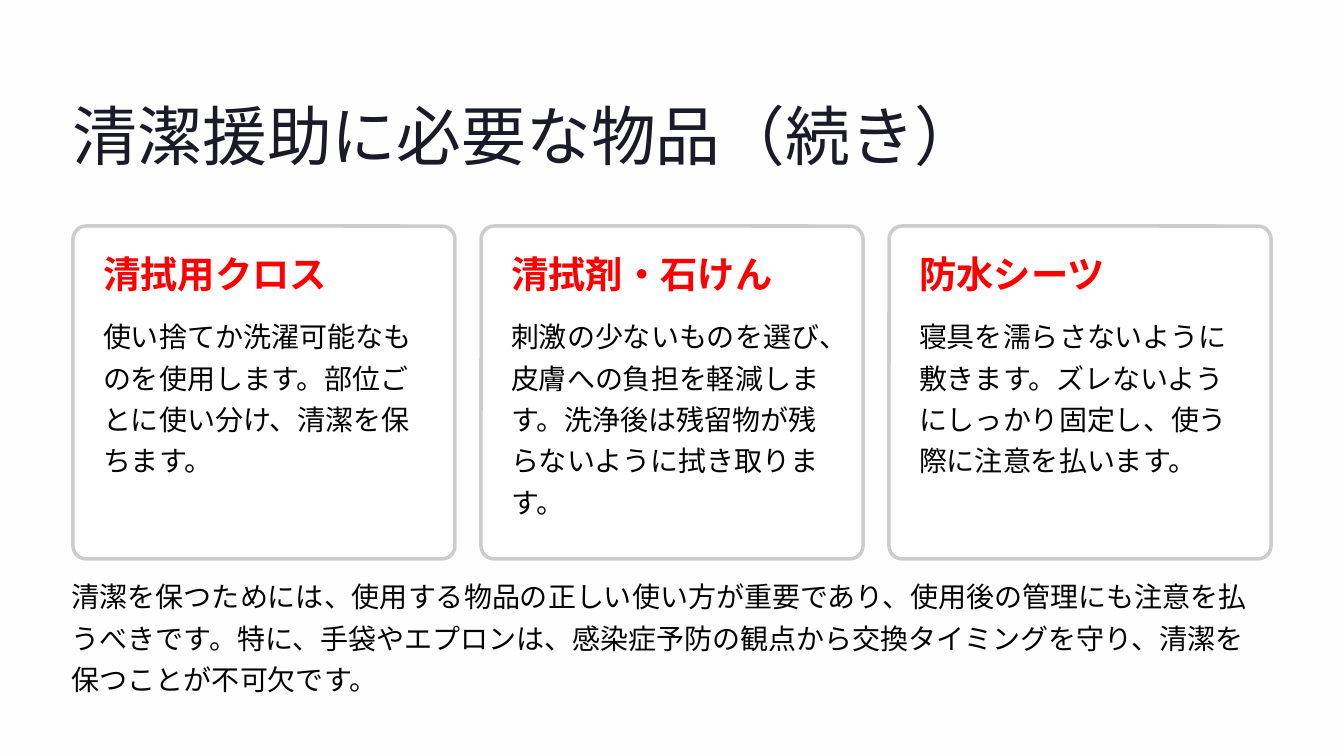
import pptx
import pptx.dml.color
import pptx.enum.lang
import pptx.enum.shapes
import pptx.oxml
import pptx.oxml.ns
import pptx.util

EMU_PER_PX = 914400 / 84
CARD_LEFT, CARD_TOP, CARD_WIDTH, CARD_HEIGHT = 73, 226, 382, 333
CARD_PITCH = 408
CARD_PADDING = 30
CARDS = [
    ("清拭用クロス",
     "使い捨てか洗濯可能なものを使用します。部位ごとに使い分け、清潔を保ちます。"),
    ("清拭剤・石けん",
     "刺激の少ないものを選び、皮膚への負担を軽減します。洗浄後は残留物が残らないように拭き取ります。"),
    ("防水シーツ",
     "寝具を濡らさないように敷きます。ズレないようにしっかり固定し、使う際に注意を払います。"),
]
SUMMARY = (
    "清潔を保つためには、使用する物品の正しい使い方が重要であり、使用後の管理にも注意を払うべきです。"
    "特に、手袋やエプロンは、感染症予防の観点から交換タイミングを守り、清潔を保つことが不可欠です。"
)
TITLE_STYLE = ("Inter", 55.5, 69.5, "1B1B27", False)
HEADING_STYLE = ("Inter", 32, 34.5, "FF0000", True)
BODY_STYLE = ("Cabin", 24, 35.5, "030303", False)


def px(*lengths):
    """Turn pixel lengths into a list of EMU."""
    return [pptx.util.Emu(round(length * EMU_PER_PX)) for length in lengths]


def add_text(box, text, style, wrap):
    """Add a text box without margins; box is left, top, width, height in px."""
    font_name, size, line_spacing, color, bold = style
    text_frame = slide.shapes.add_textbox(*px(*box)).text_frame
    text_frame.margin_left = text_frame.margin_right = 0
    text_frame.margin_top = text_frame.margin_bottom = 0
    text_frame.word_wrap = wrap
    text_frame.text = text
    paragraph = text_frame.paragraphs[0]
    paragraph.line_spacing = pptx.util.Pt(line_spacing)
    font = paragraph.runs[0].font
    font.name = font_name
    font.size = pptx.util.Pt(size)
    font.bold = bold
    font.color.rgb = pptx.dml.color.RGBColor.from_string(color)
    font.language_id = pptx.enum.lang.MSO_LANGUAGE_ID.JAPANESE
    latin = paragraph.runs[0]._r.rPr.find(pptx.oxml.ns.qn("a:latin"))
    east_asian = pptx.oxml.parse_xml(
        f'<a:ea {pptx.oxml.ns.nsdecls("a")} typeface="{font_name}"/>')
    latin.addnext(east_asian)


presentation = pptx.Presentation()
presentation.slide_width, presentation.slide_height = px(1344, 756)
slide = presentation.slides.add_slide(presentation.slide_layouts[6])
slide.background.fill.solid()
slide.background.fill.fore_color.rgb = pptx.dml.color.RGBColor.from_string("FEFEFE")

add_text((73, 92, 913, 81), "清潔援助に必要な物品（続き）", TITLE_STYLE, False)

for index, (heading, body) in enumerate(CARDS):
    left = CARD_LEFT + index * CARD_PITCH
    card = slide.shapes.add_shape(
        pptx.enum.shapes.MSO_SHAPE.ROUNDED_RECTANGLE,
        *px(left, CARD_TOP, CARD_WIDTH, CARD_HEIGHT))
    card.adjustments[0] = 0.04
    card.shadow.inherit = False
    card.fill.solid()
    card.fill.fore_color.rgb = pptx.dml.color.RGBColor.from_string("FFFFFF")
    card.line.color.rgb = pptx.dml.color.RGBColor.from_string("CCCCCC")
    card.line.width = pptx.util.Pt(3)

    text_left = left + CARD_PADDING
    text_width = CARD_WIDTH - 2 * CARD_PADDING
    add_text((text_left, CARD_TOP + 30, text_width, 41), heading, HEADING_STYLE, False)
    add_text((text_left, CARD_TOP + 86, text_width, 167), body, BODY_STYLE, True)

add_text((72, 572, 1198, 125), SUMMARY, BODY_STYLE, True)

presentation.save("out.pptx")
